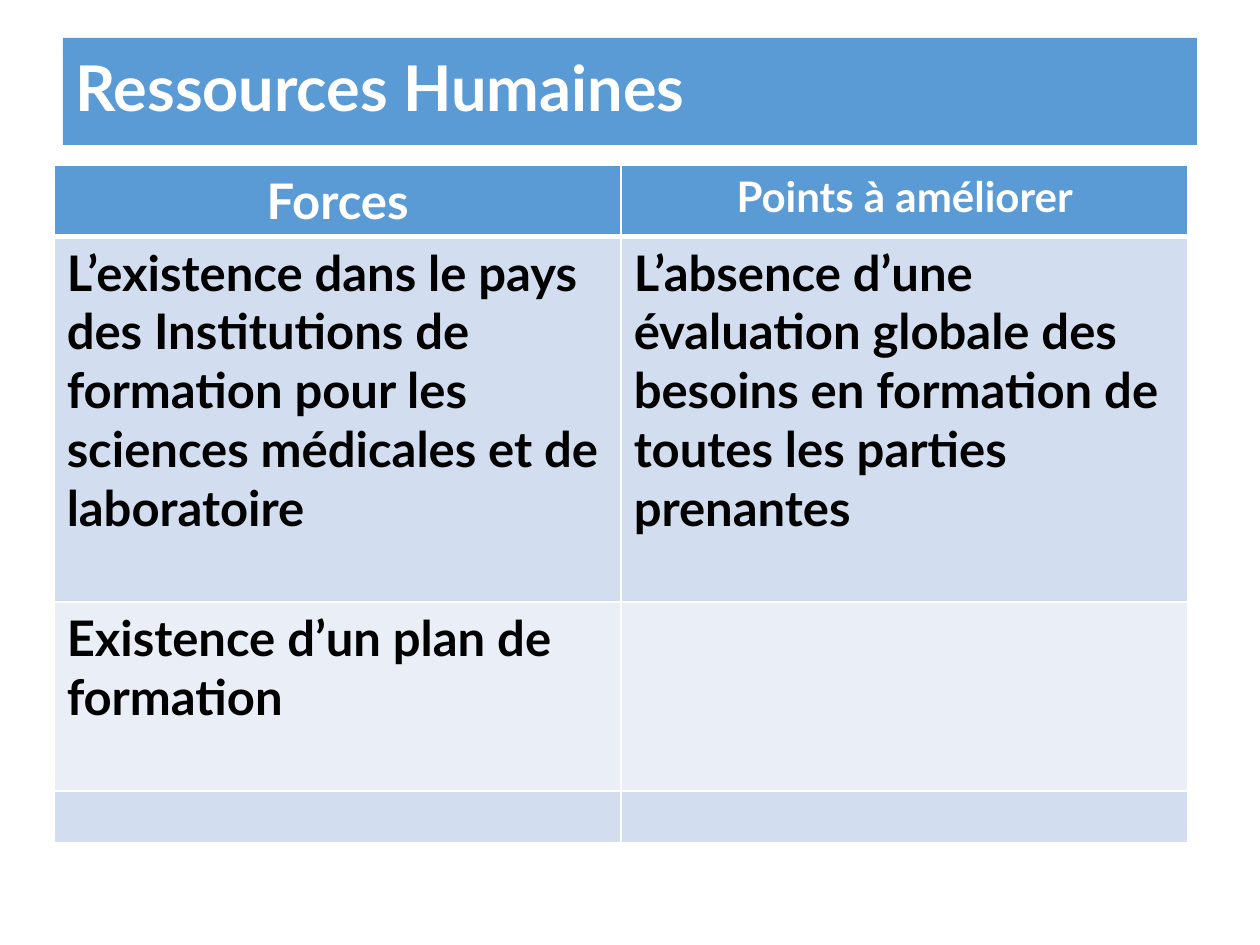
from lxml.etree import SubElement as Sub
from pptx import Presentation
from pptx.dml.color import RGBColor as Rgb
from pptx.enum.shapes import MSO_SHAPE as Shape
from pptx.enum.text import MSO_ANCHOR as Anchor, PP_ALIGN as Align
from pptx.oxml.ns import qn
from pptx.util import Inches, Pt

BLUE, WHITE, BLACK = "5B9BD5", "FFFFFF", "000000"
BANDS = ["D2DEEF", "EAEFF7"]


def paint(fill, tint):
    fill.solid()
    fill.fore_color.rgb = Rgb.from_string(tint)


def write(frame, text, size, tint, align):
    para = frame.paragraphs[0]
    para.alignment = align
    run = para.add_run()
    run.text = text
    form = {"name": "Lato", "size": Pt(size), "bold": True}
    for key, value in form.items():
        setattr(run.font, key, value)
    paint(run.font.fill, tint)
    return para


deck = Presentation()
deck.slide_width, deck.slide_height = Inches(10), Inches(7.5)
slide = deck.slides.add_slide(deck.slide_layouts[6])

# Title bar
bar = slide.shapes.add_shape(
    Shape.RECTANGLE, Inches(0.5), Inches(0.3), Inches(9), Inches(0.85))
bar.shadow.inherit = False
paint(bar.fill, BLUE)
bar.line.fill.background()
frame = bar.text_frame
frame.word_wrap = True
frame.vertical_anchor = Anchor.MIDDLE
write(frame, "Ressources Humaines", 36, WHITE, Align.LEFT).line_spacing = 0.9

# Table content: row height and the two texts
rows = [
    (0.56, ["Forces", "Points à améliorer"]),
    (2.9, ["L’existence dans le pays des Institutions de formation "
           "pour les sciences médicales et de laboratoire",
           "L’absence d’une évaluation globale des besoins en formation "
           "de toutes les parties prenantes"]),
    (1.5, ["Existence d’un plan de formation", ""]),
    (0.41, ["", ""]),
]
grid = slide.shapes.add_table(
    len(rows), 2, Inches(0.43), Inches(1.31), Inches(9), Inches(5.37)).table

# Cells with white rules, thicker under the header
for r, (height, texts) in enumerate(rows):
    grid.rows[r].height = Inches(height)
    head = r == 0
    for c, text in enumerate(texts):
        cell = grid.cell(r, c)
        props = cell._tc.get_or_add_tcPr()
        widths = {"L": 1, "R": 1, "T": 3 if r == 1 else 1, "B": 3 if head else 1}
        for side, width in widths.items():
            line = Sub(props, qn("a:ln" + side), w=str(Pt(width)))
            solid = Sub(line, qn("a:solidFill"))
            Sub(solid, qn("a:srgbClr"), val=WHITE)
        paint(cell.fill, BLUE if head else BANDS[(r - 1) % 2])
        if text:
            size = 24 if head and c == 1 else 28
            write(cell.text_frame, text, size, WHITE if head else BLACK,
                  Align.CENTER if head else Align.LEFT)

deck.save("out.pptx")
